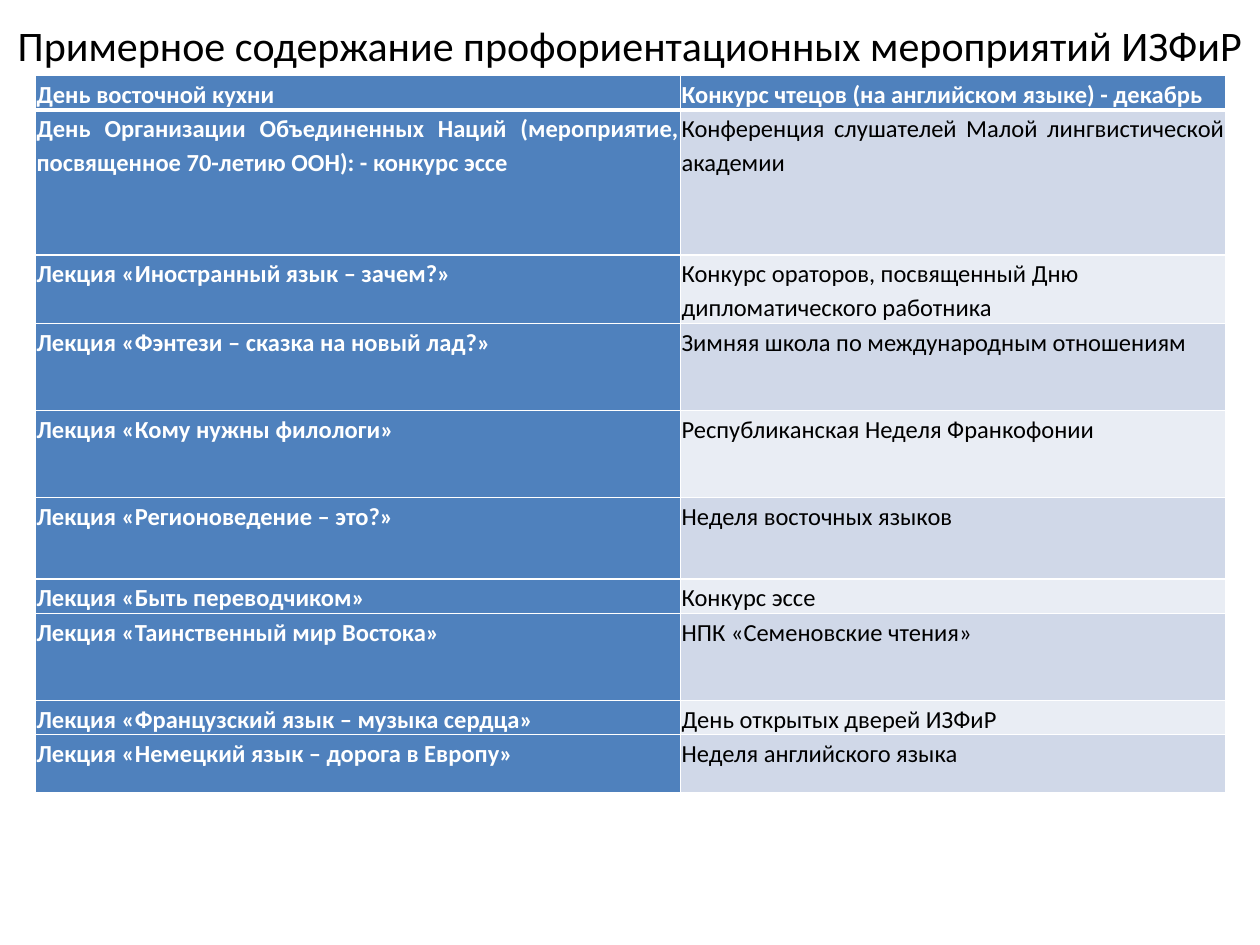
"""Builds the slide with the table of career guidance events."""
from lxml import etree
from pptx import Presentation
from pptx.dml.color import RGBColor
from pptx.enum.text import MSO_ANCHOR, MSO_AUTO_SIZE, PP_ALIGN
from pptx.oxml.ns import qn
from pptx.util import Inches, Pt

LEFT, CENTER, JUSTIFY = PP_ALIGN.LEFT, PP_ALIGN.CENTER, PP_ALIGN.JUSTIFY
MIDDLE, TOP = MSO_ANCHOR.MIDDLE, MSO_ANCHOR.TOP
NO_AUTOFIT = MSO_AUTO_SIZE.NONE

TITLE = "Примерное содержание профориентационных мероприятий ИЗФиР"
COL_WIDTHS = (5.12, 4.33)
EVENTS = [
    (0.27, "День восточной кухни", "Конкурс чтецов (на английском языке) - декабрь"),
    (1.15, "День Организации Объединенных Наций (мероприятие, посвященное 70-летию ООН): - конкурс эссе",
     "Конференция слушателей Малой лингвистической академии"),
    (0.27, "Лекция «Иностранный язык – зачем?»",
     "Конкурс ораторов, посвященный Дню дипломатического работника"),
    (0.69, "Лекция «Фэнтези – сказка на новый лад?»", "Зимняя школа по международным отношениям"),
    (0.69, "Лекция «Кому нужны филологи»", "Республиканская Неделя Франкофонии"),
    (0.65, "Лекция «Регионоведение – это?»", "Неделя восточных языков"),
    (0.27, "Лекция «Быть переводчиком»", "Конкурс эссе"),
    (0.69, "Лекция «Таинственный мир Востока»", "НПК «Семеновские чтения»"),
    (0.27, "Лекция «Французский язык – музыка сердца»", "День открытых дверей ИЗФиР"),
    (0.46, "Лекция «Немецкий язык – дорога в Европу»", "Неделя английского языка"),
]
LEFT_ALIGNED_EVENTS = (2, 4, 6)


def rgb(value):
    return RGBColor.from_string(value)


def write(tf, text, size, color, font, bold=False, align=LEFT, spacing=None, after=None):
    p = tf.paragraphs[0]
    p.alignment = align
    if spacing is not None:
        p.line_spacing = spacing
    if after is not None:
        p.space_after = Pt(after)
    r = p.add_run()
    r.text = text
    r.font.name = font
    r.font.size = Pt(size)
    r.font.bold = bold
    r.font.color.rgb = rgb(color)


class Deck:
    font = "Calibri"
    dark, light = "000000", "FFFFFF"
    accent = "4F81BD"
    bands = ("E9EDF4", "D0D8E8")

    def __init__(self, prs):
        self.s = prs.slides.add_slide(prs.slide_layouts[5])

    def title(self, text, x, y, w, h):
        sp = self.s.shapes.title
        sp.left, sp.top, sp.width, sp.height = map(Inches, (x, y, w, h))
        tf = sp.text_frame
        tf.word_wrap = True
        tf.auto_size = NO_AUTOFIT
        tf.vertical_anchor = MIDDLE
        write(tf, text, 24, self.dark, self.font, align=CENTER)

    def borders(self, cell, top, bottom):
        tc_pr = cell._tc.get_or_add_tcPr()
        widths = {"a:lnL": 1, "a:lnR": 1, "a:lnT": top, "a:lnB": bottom}
        for i, (tag, width) in enumerate(widths.items()):
            ln = etree.Element(qn(tag), w=str(Pt(width)))
            fill = etree.SubElement(ln, qn("a:solidFill"))
            etree.SubElement(fill, qn("a:srgbClr"), val=self.light)
            tc_pr.insert(i, ln)

    def cell(self, cell, text, row, col):
        strong = row == 0 or col == 0
        lecture = col == 0 and row > 1
        left = lecture or (col == 1 and row in LEFT_ALIGNED_EVENTS)
        cell.margin_left = cell.margin_right = Inches(0.01)
        cell.margin_top = cell.margin_bottom = 0
        cell.vertical_anchor = TOP
        cell.fill.solid()
        cell.fill.fore_color.rgb = rgb(self.accent if strong else self.bands[row % 2])
        self.borders(cell, 3 if row == 1 else 1, 3 if row == 0 else 1)
        write(cell.text_frame, text, 14, self.light if strong else self.dark, self.font,
              bold=strong, align=LEFT if left else JUSTIFY, spacing=1.15,
              after=10 if lecture else 0)

    def table(self, events, widths, x, y):
        height = sum(event[0] for event in events)
        sp = self.s.shapes.add_table(len(events), len(widths), Inches(x), Inches(y),
                                     Inches(sum(widths)), Inches(height))
        table = sp.table
        for column, width in zip(table.columns, widths):
            column.width = Inches(width)
        for row, (row_height, *texts) in enumerate(events):
            table.rows[row].height = Inches(row_height)
            for col, text in enumerate(texts):
                self.cell(table.cell(row, col), text, row, col)


def main():
    prs = Presentation()
    prs.slide_width, prs.slide_height = Inches(10), Inches(7.5)
    deck = Deck(prs)
    deck.title(TITLE, 0, -0.27, 10, 1.25)
    deck.table(EVENTS, COL_WIDTHS, 0.28, 0.6)
    prs.save("out.pptx")


if __name__ == "__main__":
    main()
